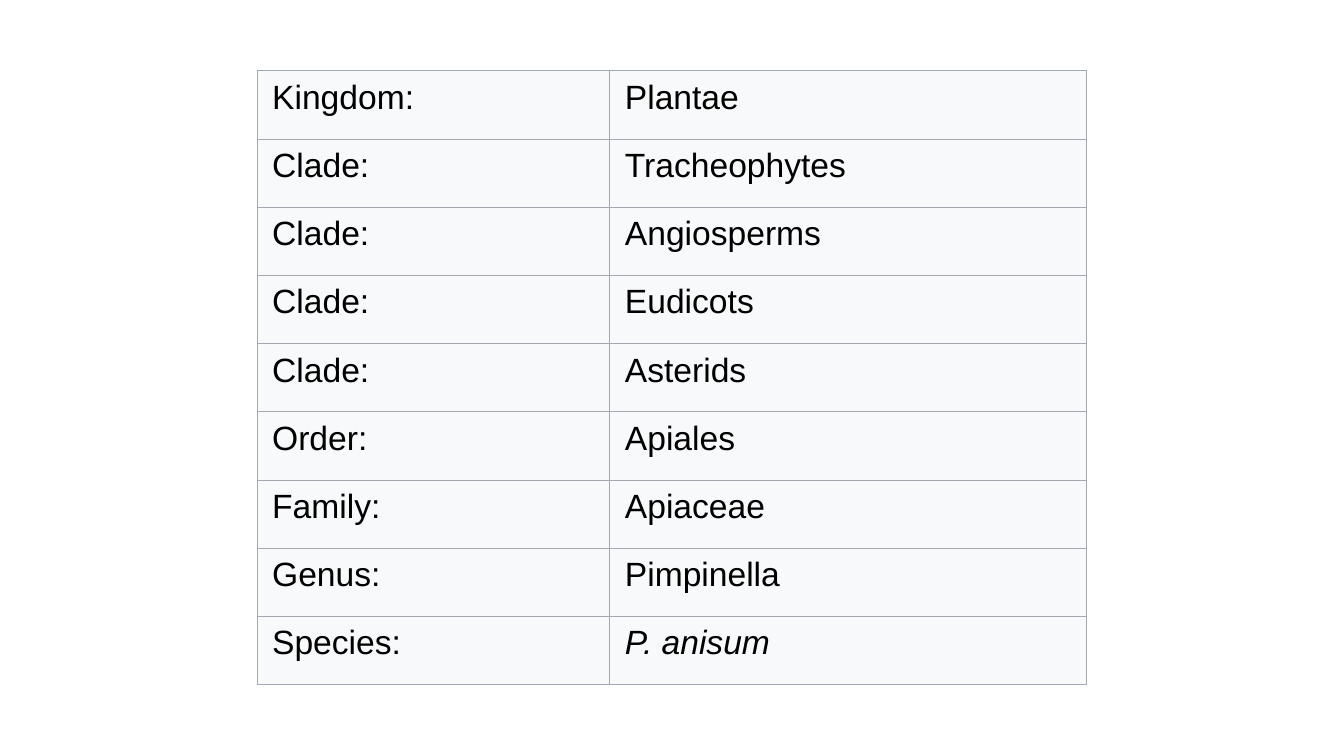
from lxml.etree import SubElement
from pptx import Presentation
from pptx.dml.color import RGBColor
from pptx.oxml.ns import qn
from pptx.util import Pt

RANKS = [
    ("Kingdom:", "Plantae"),
    ("Clade:", "Tracheophytes"),
    ("Clade:", "Angiosperms"),
    ("Clade:", "Eudicots"),
    ("Clade:", "Asterids"),
    ("Order:", "Apiales"),
    ("Family:", "Apiaceae"),
    ("Genus:", "Pimpinella"),
    ("Species:", "P. anisum"),
]
COLUMN_WIDTHS = (252, 340.56)
ROW_HEIGHT = 48.72


def paint(color_format, value):
    color_format.rgb = RGBColor.from_string(value)


def write(frame, text, size=24, font="Arial", color="000000", italic=False):
    span = frame.paragraphs[0].add_run()
    span.text = text
    span.font.size = Pt(size)
    span.font.name = font
    span.font.bold = False
    span.font.italic = italic
    paint(span.font.color, color)


def add_borders(cell, color, width):
    properties = cell._tc.get_or_add_tcPr()
    for position, side in enumerate(("lnL", "lnR", "lnT", "lnB")):
        line = SubElement(properties, qn(f"a:{side}"), w=str(Pt(width)))
        fill = SubElement(line, qn("a:solidFill"))
        SubElement(fill, qn("a:srgbClr"), val=color)
        properties.insert(position, line)


def format_cell(cell, fill, border):
    cell.margin_left = cell.margin_right = Pt(10.8)
    cell.margin_top = cell.margin_bottom = Pt(5.76)
    cell.fill.solid()
    paint(cell.fill.fore_color, fill)
    add_borders(cell, border, 0.6)


def add_rank_table(page, left, top):
    table = page.shapes.add_table(
        len(RANKS), len(COLUMN_WIDTHS), Pt(left), Pt(top),
        Pt(sum(COLUMN_WIDTHS)), Pt(ROW_HEIGHT * len(RANKS)),
    ).table
    table.first_row = table.horz_banding = False
    for column, width in zip(table.columns, COLUMN_WIDTHS):
        column.width = Pt(width)
    for row, texts in zip(table.rows, RANKS):
        row.height = Pt(ROW_HEIGHT)
        for cell, text in zip(row.cells, texts):
            format_cell(cell, "F8F9FA", "A2A9B1")
            write(cell.text_frame, text, italic=text == RANKS[-1][1])


def main():
    deck = Presentation()
    deck.slide_width, deck.slide_height = Pt(960), Pt(540)
    page = deck.slides.add_slide(deck.slide_layouts[6])
    add_rank_table(page, 183.6, 50.6)
    deck.save("out.pptx")


if __name__ == "__main__":
    main()
